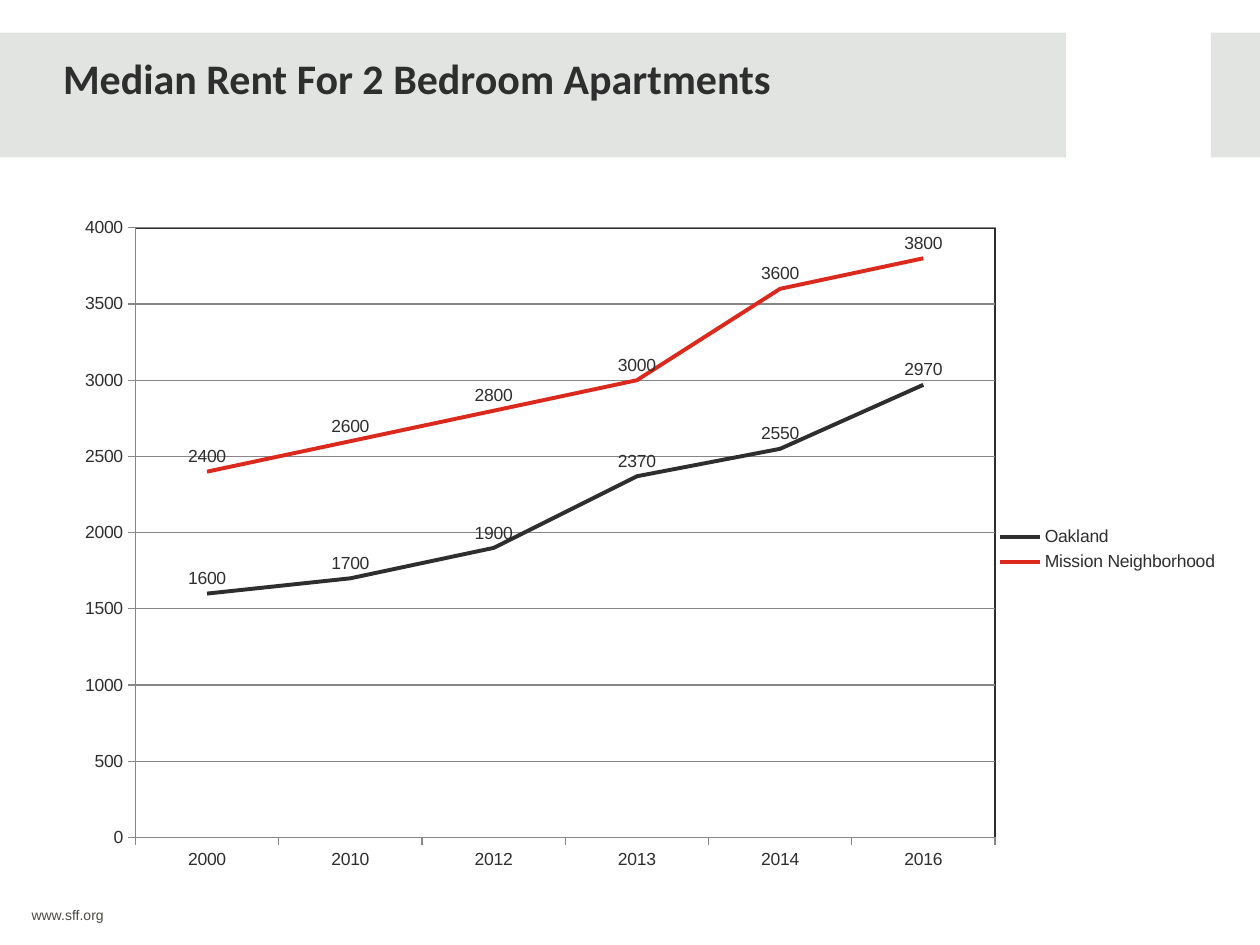
"""Build the slide comparing median rents for two bedroom apartments."""
import pptx
import pptx.chart.data
import pptx.dml.color
import pptx.enum.chart
import pptx.enum.shapes
import pptx.enum.text
import pptx.oxml
import pptx.oxml.ns
import pptx.util
from pptx.util import Inches, Pt

TITLE = "Median Rent For 2 Bedroom Apartments"
FOOTER = "www.sff.org"
YEARS = ["2000", "2010", "2012", "2013", "2014", "2016"]
RENTS = [
    ("Oakland", [1600, 1700, 1900, 2370, 2550, 2970], "2F2E2F"),
    ("Mission Neighborhood", [2400, 2600, 2800, 3000, 3600, 3800], "DB291D"),
]
BANDS = [(0, 8.46), (9.61, 0.39)]
PLOT = {"x": 0.062, "y": 0.015, "w": 0.736, "h": 0.92}
DARK, GRID, BAND, FOOTER_COLOR = "2F2E2F", "868686", "E1E4E1", "4B4944"


def color(value):
    return pptx.dml.color.RGBColor.from_string(value)


def style_font(font, name, size, value, bold=False):
    font.name, font.size, font.bold = name, Pt(size), bold
    font.color.rgb = color(value)


def style_line(line, value, width):
    line.color.rgb = color(value)
    line.width = Pt(width)


def set_text(shape, text, anchor, **font):
    frame = shape.text_frame
    frame.margin_left = frame.margin_right = frame.margin_top = frame.margin_bottom = 0
    frame.word_wrap = True
    frame.vertical_anchor = anchor
    frame.text = text
    paragraph = frame.paragraphs[0]
    paragraph.alignment = pptx.enum.text.PP_ALIGN.LEFT
    style_font(paragraph.runs[0].font, **font)
    return paragraph


def set_plot_area(chart):
    namespaces = pptx.oxml.ns.nsdecls("c", "a")
    plot_area = chart.element.find(".//" + pptx.oxml.ns.qn("c:plotArea"))
    layout = plot_area.find(pptx.oxml.ns.qn("c:layout"))
    if layout is not None:
        plot_area.remove(layout)
    sizes = "".join(f'<c:{key} val="{value}"/>' for key, value in PLOT.items())
    plot_area.insert(0, pptx.oxml.parse_xml(
        f'<c:layout {namespaces}><c:manualLayout><c:layoutTarget val="inner"/>'
        f'<c:xMode val="edge"/><c:yMode val="edge"/>{sizes}</c:manualLayout></c:layout>'))
    plot_area.append(pptx.oxml.parse_xml(
        f'<c:spPr {namespaces}><a:noFill/><a:ln w="9525"><a:solidFill>'
        f'<a:srgbClr val="{DARK}"/></a:solidFill></a:ln></c:spPr>'))


def add_rent_chart(slide):
    data = pptx.chart.data.CategoryChartData()
    data.categories = YEARS
    for name, values, _ in RENTS:
        data.add_series(name, values)
    chart = slide.shapes.add_chart(
        pptx.enum.chart.XL_CHART_TYPE.LINE,
        Inches(0.5), Inches(1.73), Inches(9.27), Inches(5.26), data).chart
    style_font(chart.font, "Arial", 10, DARK)
    chart.has_title = False
    chart.has_legend = True
    chart.legend.position = pptx.enum.chart.XL_LEGEND_POSITION.RIGHT
    chart.legend.include_in_layout = False

    value_axis = chart.value_axis
    value_axis.minimum_scale, value_axis.maximum_scale, value_axis.major_unit = 0, 4000, 500
    value_axis.has_major_gridlines = True
    style_line(value_axis.major_gridlines.format.line, GRID, 0.75)
    for axis in (chart.category_axis, value_axis):
        axis.major_tick_mark = pptx.enum.chart.XL_TICK_MARK.OUTSIDE
        style_line(axis.format.line, GRID, 0.75)

    chart.plots[0].vary_by_categories = False
    for series, (_, _, value) in zip(chart.plots[0].series, RENTS):
        series.smooth = False
        series.marker.style = pptx.enum.chart.XL_MARKER_STYLE.NONE
        style_line(series.format.line, value, 2.25)
        series.data_labels.show_value = True
        series.data_labels.position = pptx.enum.chart.XL_LABEL_POSITION.ABOVE
    set_plot_area(chart)


def main():
    presentation = pptx.Presentation()
    presentation.slide_width, presentation.slide_height = Inches(10), Inches(7.5)
    slide = presentation.slides.add_slide(presentation.slide_layouts[5])
    title = slide.shapes.title

    for left, width in BANDS:
        band = slide.shapes.add_shape(
            pptx.enum.shapes.MSO_SHAPE.RECTANGLE,
            Inches(left), Inches(0.26), Inches(width), Inches(0.99))
        band.shadow.inherit = False
        band.fill.solid()
        band.fill.fore_color.rgb = color(BAND)
        band.line.fill.background()

    title.left, title.top = Inches(0.5), Inches(0.41)
    title.width, title.height = Inches(7.65), Inches(0.41)
    set_text(title, TITLE, pptx.enum.text.MSO_ANCHOR.MIDDLE,
             name="Calibri", size=24, value=DARK, bold=True)
    slide.shapes._spTree.append(title.element)

    footer = slide.shapes.add_textbox(Inches(0.25), Inches(7.22), Inches(4.75), Inches(0.16))
    paragraph = set_text(footer, FOOTER, pptx.enum.text.MSO_ANCHOR.TOP,
                         name="Arial", size=8, value=FOOTER_COLOR)
    paragraph.line_spacing = Pt(8)

    add_rent_chart(slide)
    presentation.save("out.pptx")


if __name__ == "__main__":
    main()
